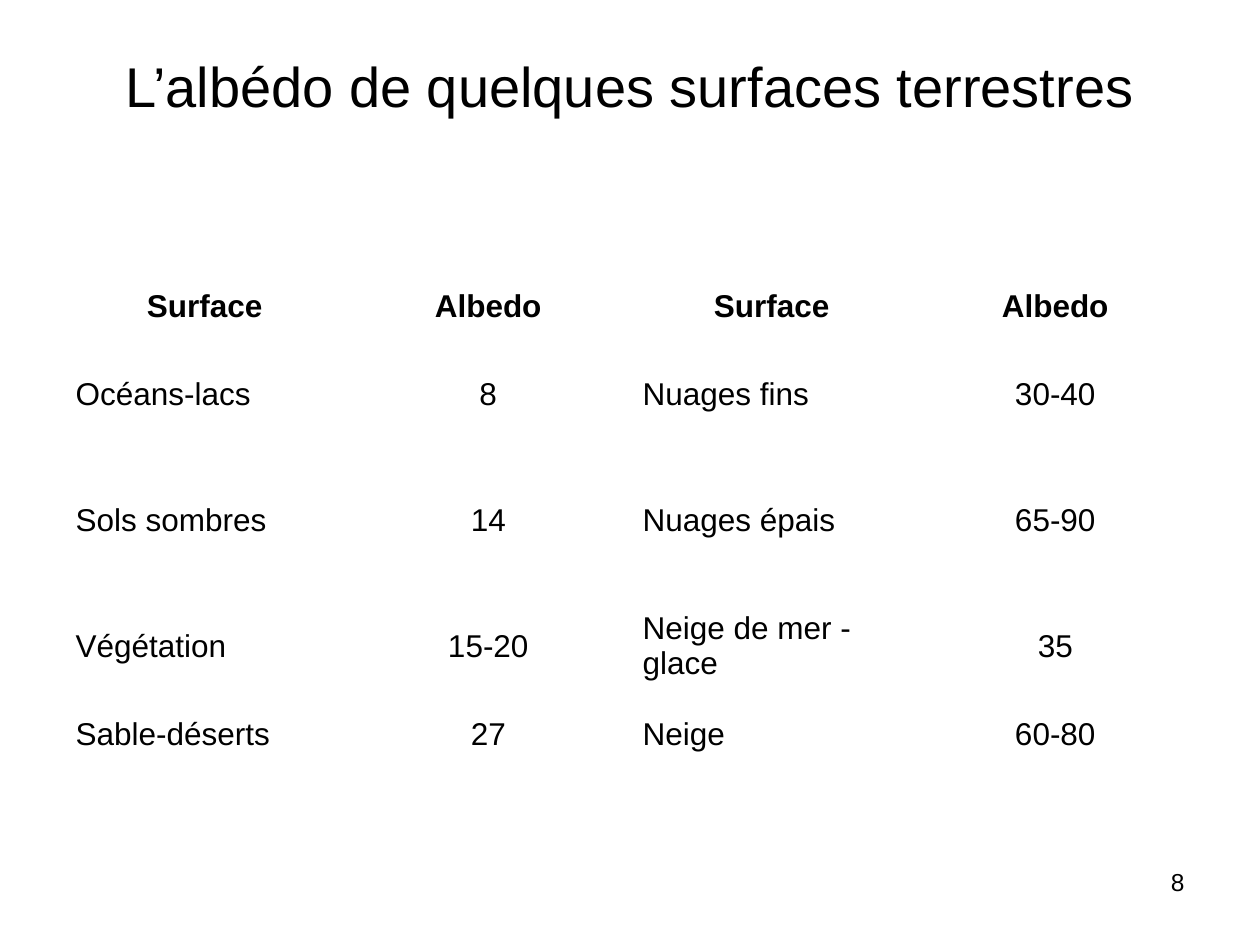
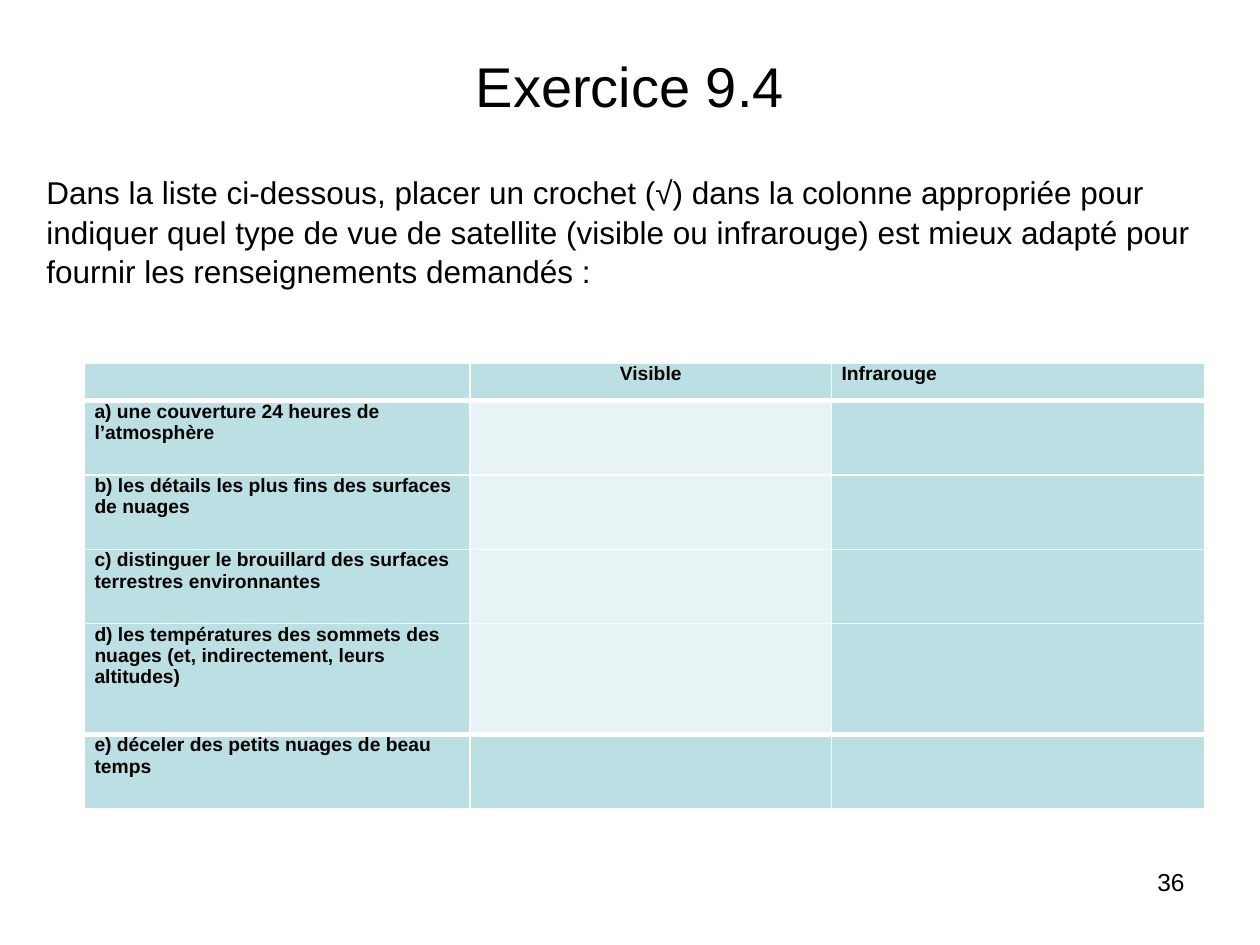
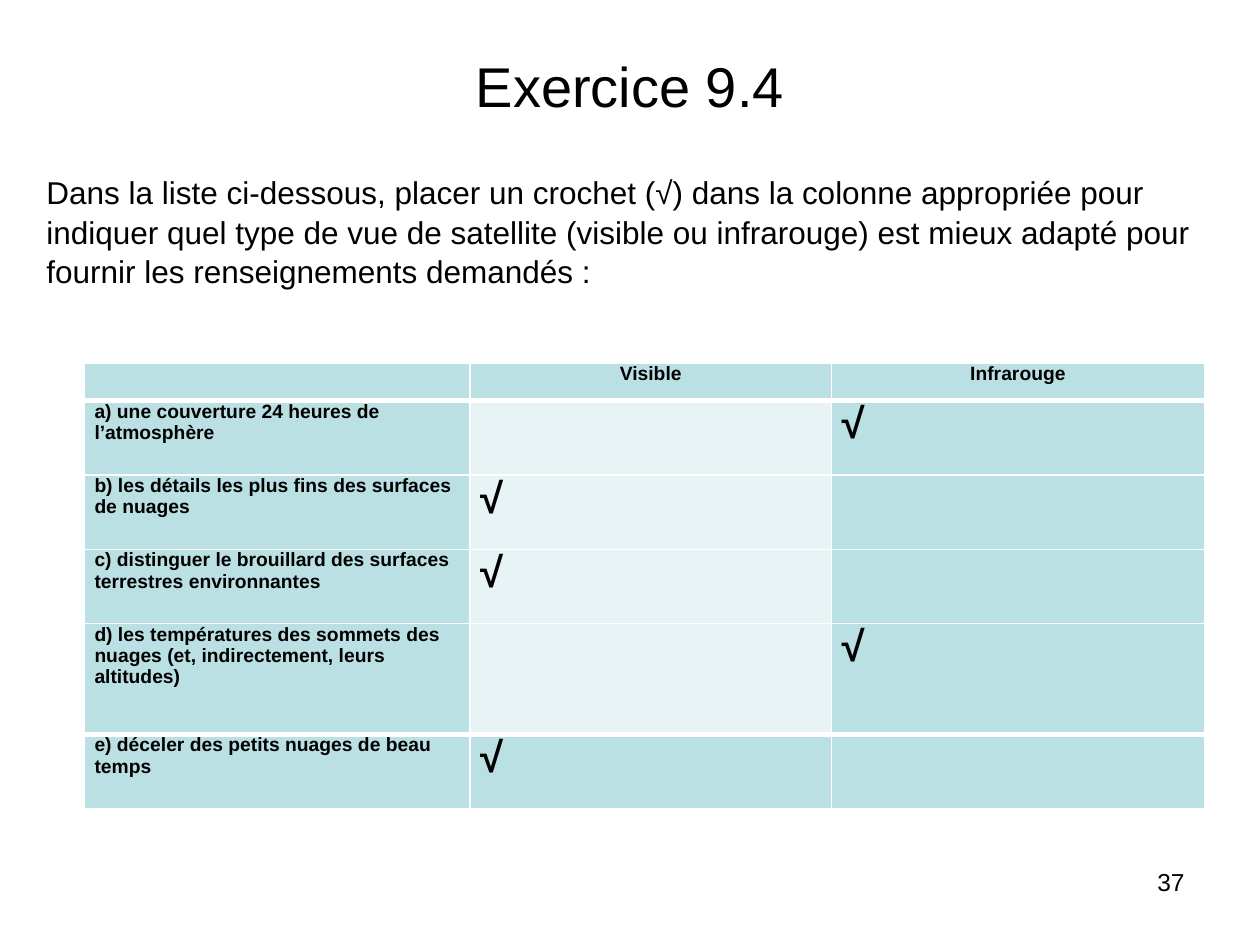
from lxml import etree
from pptx import Presentation
from pptx.dml.color import RGBColor
from pptx.enum.text import MSO_ANCHOR, PP_ALIGN
from pptx.oxml.ns import qn
from pptx.util import Inches, Pt

LEFT, CENTER, RIGHT = PP_ALIGN.LEFT, PP_ALIGN.CENTER, PP_ALIGN.RIGHT
TOP, MIDDLE = MSO_ANCHOR.TOP, MSO_ANCHOR.MIDDLE

FONT = "Arial"
BLACK, WHITE, TEAL, PALE = "000000", "FFFFFF", "BBE0E3", "E7F3F4"
TITLE_BOX = (0.5, 0.05, 9, 1.25)
TASK_BOX = (0.27, 1.31, 9.61, 1.01)
PAGE_BOX = (7.17, 6.83, 2.33, 0.52)

ALBEDO = [
    ("Surface", "Albedo", "Surface", "Albedo"),
    ("Océans-lacs", "8", "Nuages fins", "30-40"),
    ("Sols sombres", "14", "Nuages épais", "65-90"),
    ("Végétation", "15-20", "Neige de mer - glace", "35"),
    ("Sable-déserts", "27", "Neige", "60-80"),
]
ALBEDO_ROWS = (0.4, 1, 1, 1, 0.4)

TASK = ("Dans la liste ci-dessous, placer un crochet (√) dans la colonne "
        "appropriée pour indiquer quel type de vue de satellite (visible ou "
        "infrarouge) est mieux adapté pour fournir les renseignements "
        "demandés\u00a0:")
HEADS = ("", "Visible", "Infrarouge")
ITEMS = [
    "a) une couverture 24 heures de l’atmosphère",
    "b) les détails les plus fins des surfaces de nuages",
    "c) distinguer le brouillard des surfaces terrestres environnantes",
    "d) les températures des sommets des nuages (et, indirectement, leurs altitudes)",
    "e) déceler des petits nuages de beau temps",
]
ANSWERS = (2, 1, 1, 2, 1)  # column ticked for each item
QUIZ_COLS = (3.06, 2.87, 2.96)
QUIZ_ROWS = (0.29, 0.59, 0.59, 0.59, 0.88, 0.59)
TICK = "√"


def color(hex):
    return RGBColor.from_string(hex)


def write(frame, text, size, align=LEFT, bold=False):
    para = frame.paragraphs[0]
    para.alignment = align
    run = para.add_run()
    run.text = text
    font = run.font
    font.name, font.size, font.bold = FONT, Pt(size), bold
    font.color.rgb = color(BLACK)
    return para


def add_text(slide, box, text, size, align=LEFT):
    frame = slide.shapes.add_textbox(*map(Inches, box)).text_frame
    frame.word_wrap = True
    return write(frame, text, size, align)


def add_page(deck, title, number):
    """Add a slide with the shared title and page number."""
    slide = deck.slides.add_slide(deck.slide_layouts[5])
    head = slide.shapes.title
    head.left, head.top, head.width, head.height = map(Inches, TITLE_BOX)
    head.text_frame.vertical_anchor = MIDDLE
    write(head.text_frame, title, 32, CENTER)
    add_text(slide, PAGE_BOX, str(number), 14, RIGHT)
    return slide


def add_grid(slide, left, top, cols, rows):
    shape = slide.shapes.add_table(
        len(rows), len(cols), Inches(left), Inches(top),
        Inches(sum(cols)), Inches(sum(rows)))
    table = shape.table
    table.first_row = table.horz_banding = False
    for col, width in zip(table.columns, cols):
        col.width = Inches(width)
    for row, height in zip(table.rows, rows):
        row.height = Inches(height)
    return table


def set_edges(cell, above, below):
    """Draw white borders; above and below are widths in points."""
    props = cell._tc.get_or_add_tcPr()
    for side, width in (("L", 1), ("R", 1), ("T", above), ("B", below)):
        line = etree.SubElement(props, qn(f"a:ln{side}"), w=str(Pt(width)))
        fill = etree.SubElement(line, qn("a:solidFill"))
        etree.SubElement(fill, qn("a:srgbClr"), val=WHITE)


def add_albedo(deck):
    slide = add_page(deck, "L’albédo de quelques surfaces terrestres", 8)
    table = add_grid(slide, 0.5, 2.23, (2.25,) * 4, ALBEDO_ROWS)
    for r, row in enumerate(ALBEDO):
        for c, text in enumerate(row):
            cell = table.cell(r, c)
            cell.fill.background()
            cell.vertical_anchor = MIDDLE
            align = CENTER if r == 0 or c % 2 else LEFT
            write(cell.text_frame, text, 18, align, bold=r == 0)


def add_quiz(deck, number, solved):
    slide = add_page(deck, "Exercice 9.4", number)
    add_text(slide, TASK_BOX, TASK, 18).line_spacing = 1.05
    table = add_grid(slide, 0.67, 2.88, QUIZ_COLS, QUIZ_ROWS)
    last = len(ITEMS)
    rows = [HEADS]
    for item, answer in zip(ITEMS, ANSWERS):
        marks = [TICK if solved and c == answer else "" for c in (1, 2)]
        rows.append([item] + marks)
    heavy = (1, last)  # rows with a thick rule above them
    for r, row in enumerate(rows):
        for c, text in enumerate(row):
            cell = table.cell(r, c)
            set_edges(cell, 3 if r in heavy else 1, 3 if r + 1 in heavy else 1)
            cell.fill.solid()
            inner = c == 1 and 0 < r < last
            cell.fill.fore_color.rgb = color(PALE if inner else TEAL)
            cell.vertical_anchor = TOP
            cell.margin_left = cell.margin_right = Inches(0.08)
            cell.margin_top = cell.margin_bottom = 0
            if text:
                mid = r == 0 and (c == 1 or solved)
                write(cell.text_frame, text, 24 if text == TICK else 11,
                      CENTER if mid else LEFT, bold=True)


def main():
    deck = Presentation()
    deck.slide_width, deck.slide_height = Inches(10), Inches(7.5)
    add_albedo(deck)
    add_quiz(deck, 36, solved=False)
    add_quiz(deck, 37, solved=True)
    deck.save("out.pptx")


if __name__ == "__main__":
    main()
